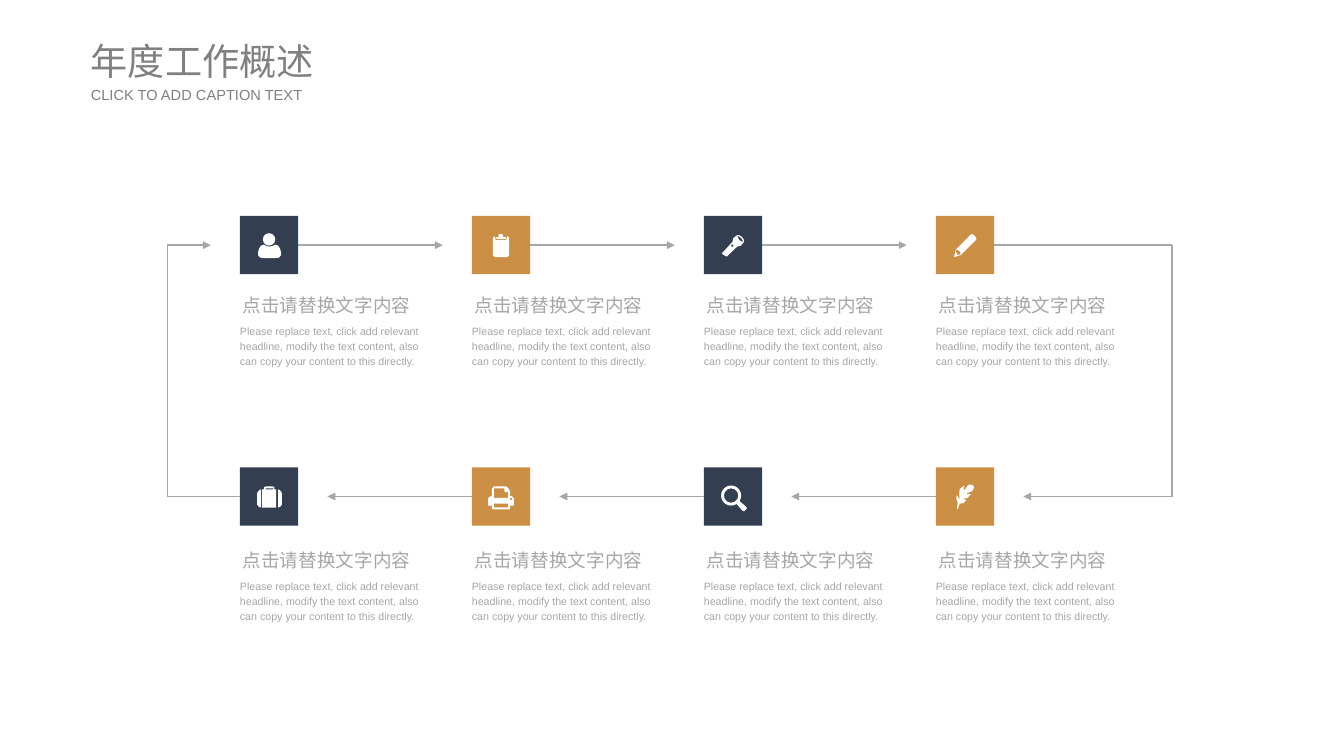
import lxml.etree
import pptx
import pptx.dml.color
import pptx.enum.shapes
import pptx.enum.text
import pptx.oxml.ns
import pptx.util

MSO = pptx.enum.shapes.MSO_SHAPE
ANCHOR = pptx.enum.text.MSO_ANCHOR
WIDTH, HEIGHT = 14.06, 7.91
LEFT, TOP = 2.51, 2.26
COL_PITCH, ROW_PITCH = 2.4267, 2.63
TILE = 0.61
LOOP_LEFT, LOOP_RIGHT = 1.75, 12.26
NAVY, OCHRE, GREY, DARK_GREY, WHITE = "333F50", "CA8F45", "A6A6A6", "808080", "FFFFFF"
HEADING = "点击请替换文字内容"
BODY = ("Please replace text, click add relevant headline, modify the text content, "
        "also can copy your content to this directly.")

PERSON = [[[(25, 30), (28, 31.5), (31, 32), (34, 31.5), (37, 30), (40, 31), (42, 34), (43, 38),
            (43, 41), (41, 43.5), (38, 44), (24, 44), (21, 43.5), (19, 41), (19, 38), (20, 34),
            (22, 31)]]]
CLIPBOARD = [[[(24, 21), (25, 25), (36, 25), (37, 21), (39, 23), (39, 41), (37, 43), (24, 43),
               (22, 41), (22, 23)]],
             [[(25, 22), (28, 22), (28, 19), (32, 19), (33, 22), (36, 22), (35, 24), (26, 24)]]]
TORCH = [[[(40, 22), (37, 20), (35, 20), (31, 23), (30, 27), (20, 38), (19, 39), (21, 41),
           (24, 42.5), (35, 32), (39, 31), (42, 27), (42, 25)],
          [(37, 25), (35, 21), (37, 21.5), (39, 23), (41.5, 27), (39, 26.5)],
          [(29, 32), (29, 30), (31, 30), (31, 32)]]]
PENCIL = [[[(41, 21), (39, 19.5), (37, 19), (21, 35), (19, 43), (26, 41), (42, 25), (42.5, 23.5)],
           [(26, 40), (23, 41), (22, 39), (21, 38), (21, 36), (22, 35), (25, 37), (26, 39)]]]
BRIEFCASE = [[[(20, 24), (22, 23), (22, 42), (20, 41.5), (18, 39), (18, 27)]],
             [[(36, 21), (35, 20), (27, 20), (25, 21), (25, 23), (23, 23), (23, 42), (38, 42),
               (38, 23), (36, 23)],
              [(27, 22), (35, 22), (35, 23), (27, 23)]],
             [[(42, 24), (40, 23), (40, 42), (42, 41.5), (44, 39), (44, 27)]]]
PRINTER = [[[(43, 31), (41, 30), (40, 30), (40, 26), (39, 23), (36, 20), (23, 20), (21, 22),
             (21, 30), (18, 31), (17, 33), (17, 40), (21, 40), (21, 43), (22, 44), (39, 44),
             (40, 43), (40, 40), (44, 40), (44, 33)],
            [(38, 32), (23, 32), (23, 22), (34, 22), (34, 25), (35, 26), (38, 26)],
            [(38, 42), (23, 42), (23, 38), (38, 38)],
            [(40, 34), (40, 32), (42, 32), (42, 34)]]]
MAGNIFIER = [[[(34, 38), (37, 35), (44, 41), (45, 43), (42, 46), (40, 45)]]]
FEATHER = [[[(23, 44), (25, 38), (29, 37.5), (32, 34), (28, 33), (33, 32), (37, 28), (33, 28),
             (32, 27), (36, 26), (39, 24), (40, 20), (38, 18.5), (35, 18), (33, 19.5), (30, 24),
             (29, 22), (30, 19), (27, 21), (25, 23), (24.5, 28), (25, 34), (22, 29),
             (21.5, 33), (23, 37), (22, 43)]]]
ICONS = [[PERSON, CLIPBOARD, TORCH, PENCIL], [BRIEFCASE, PRINTER, MAGNIFIER, FEATHER]]


def rgb(value):
    """Turn a hex string into a colour."""
    return pptx.dml.color.RGBColor.from_string(value)


def inches(*values):
    """Turn lengths in inches into slide units."""
    return [pptx.util.Inches(v) for v in values]


def col(c):
    """Left edge of a tile column."""
    return LEFT + c * COL_PITCH


def row(r):
    """Top edge of a tile row."""
    return TOP + r * ROW_PITCH


def paint(sp, color):
    """Give a shape a flat fill without line or shadow."""
    sp.shadow.inherit = False
    sp.fill.solid()
    sp.fill.fore_color.rgb = rgb(color)
    sp.line.fill.background()
    return sp


def add_preset(s, kind, x, y, w, h, color):
    """Add a flat preset shape."""
    return paint(s.shapes.add_shape(kind, *inches(x, y, w, h)), color)


def set_text(sp, text, size, color=GREY, spacing=1.0, before=0, anchor=ANCHOR.TOP):
    """Write one left-aligned paragraph into a shape."""
    tf = sp.text_frame
    tf.word_wrap = True
    tf.auto_size = pptx.enum.text.MSO_AUTO_SIZE.NONE
    tf.vertical_anchor = anchor
    tf.margin_left = tf.margin_right = tf.margin_top = tf.margin_bottom = 0
    p = tf.paragraphs[0]
    p.alignment = pptx.enum.text.PP_ALIGN.LEFT
    p.line_spacing = spacing
    p.space_before = pptx.util.Pt(before)
    r = p.add_run()
    r.text = text
    r.font.size = pptx.util.Pt(size)
    r.font.name = "Arial"
    r.font.color.rgb = rgb(color)


def add_text(s, text, x, y, w, h, **style):
    """Add a formatted text box."""
    set_text(s.shapes.add_textbox(*inches(x, y, w, h)), text, **style)


def add_outline(s, contours, x, y):
    """Draw contours, given in hundredths of an inch from a tile's corner."""
    fb = None
    for contour in contours:
        points = [(px * 10, py * 10) for px, py in contour]
        if fb is None:
            fb = s.shapes.build_freeform(*points[0], scale=pptx.util.Inches(0.001))
        else:
            fb.move_to(*points[0])
        fb.add_line_segments(points[1:], close=True)
    paint(fb.convert_to_shape(*inches(x, y)), WHITE)


def add_tile(s, r, c):
    """Add a coloured tile with its icon."""
    x, y = col(c), row(r)
    tile = add_preset(s, MSO.RECTANGLE, x, y, TILE, TILE, OCHRE if c % 2 else NAVY)
    icon = ICONS[r][c]
    for contours in icon:
        add_outline(s, contours, x, y)
    if icon is PERSON:
        add_preset(s, MSO.OVAL, x + 0.24, y + 0.18, 0.13, 0.13, WHITE)
    if icon is MAGNIFIER:
        lens = add_preset(s, MSO.DONUT, x + 0.18, y + 0.19, 0.21, 0.21, WHITE)
        lens.adjustments[0] = 0.14
    return tile


def add_caption(s, r, c):
    """Add the heading and body text under a tile."""
    x, y = col(c), row(r) + 0.77 + 0.04 * r
    add_text(s, HEADING, x + 0.03, y, 2.1, 0.26, size=14, spacing=1.2, before=2.8)
    add_text(s, BODY, x, y + 0.34, 2.02, 0.47, size=8, spacing=1.2)


def add_line(s, x1, y1, x2, y2, arrow=True, tile=None, side=None):
    """Add a grey line, joined to a tile's side if one is given."""
    kind = pptx.enum.shapes.MSO_CONNECTOR.STRAIGHT
    line = s.shapes.add_connector(kind, *inches(x1, y1, x2, y2))
    if tile is not None:
        line.begin_connect(tile, side)
    line.line.color.rgb = rgb(GREY)
    line.line.width = pptx.util.Pt(1)
    qn = pptx.oxml.ns.qn
    if arrow:
        lxml.etree.SubElement(line.line._get_or_add_ln(), qn("a:tailEnd"), type="triangle")
    lxml.etree.SubElement(line._element.spPr, qn("a:effectLst"))


def add_loop(s, tiles):
    """Link the tiles clockwise."""
    upper, lower = (row(r) + TILE / 2 for r in range(2))
    gap = TILE / 2
    for c in range(3):
        add_line(s, col(c) + TILE, upper, col(c + 1) - gap, upper, tile=tiles[0][c], side=3)
        add_line(s, col(c + 1), lower, col(c) + TILE + gap, lower, tile=tiles[1][c + 1], side=1)
    add_line(s, col(3) + TILE, upper, LOOP_RIGHT, upper, arrow=False, tile=tiles[0][3], side=3)
    add_line(s, LOOP_RIGHT, upper, LOOP_RIGHT, lower, arrow=False)
    add_line(s, LOOP_RIGHT, lower, col(3) + TILE + gap, lower)
    add_line(s, col(0), lower, LOOP_LEFT, lower, arrow=False, tile=tiles[1][0], side=1)
    add_line(s, LOOP_LEFT, lower, LOOP_LEFT, upper, arrow=False)
    add_line(s, LOOP_LEFT, upper, col(0) - gap, upper)


def add_title(s):
    """Place the title and its caption."""
    title = s.shapes.title
    title.left, title.top, title.width, title.height = inches(0.95, 0.39, 2.53, 0.49)
    set_text(title, "年度工作概述", 28, color=DARK_GREY, anchor=ANCHOR.MIDDLE)
    add_text(s, "CLICK TO ADD CAPTION TEXT", 0.95, 0.9, 2.53, 0.19, size=11, color=DARK_GREY,
             anchor=ANCHOR.MIDDLE)


def main():
    """Build the slide and save it."""
    prs = pptx.Presentation()
    prs.slide_width, prs.slide_height = inches(WIDTH, HEIGHT)
    s = prs.slides.add_slide(prs.slide_layouts[5])
    add_title(s)
    tiles = [[add_tile(s, r, c) for c in range(4)] for r in range(2)]
    add_loop(s, tiles)
    for r in range(2):
        for c in range(4):
            add_caption(s, r, c)
    prs.save("out.pptx")


if __name__ == "__main__":
    main()
